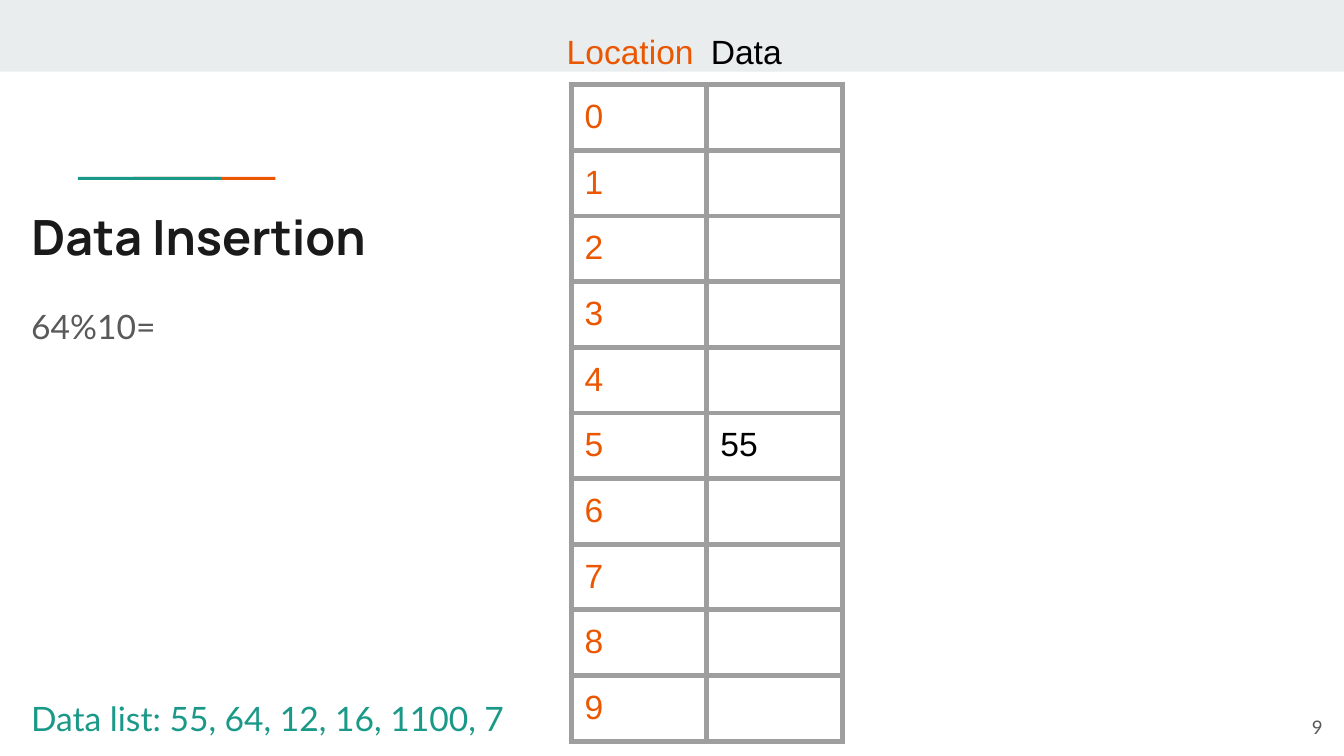
import dataclasses

import lxml.etree
import pptx
import pptx.dml.color
import pptx.enum.shapes
import pptx.enum.text
import pptx.oxml.ns
import pptx.util

ALIGN = pptx.enum.text.PP_ALIGN
ANCHOR = pptx.enum.text.MSO_ANCHOR


@dataclasses.dataclass(frozen=True)
class Theme:
    band: str = "E9EDEE"
    orange: str = "EB5600"
    teal: str = "1A9988"
    ink: str = "1A1A1A"
    black: str = "000000"
    gray: str = "595959"
    rule: str = "9E9E9E"
    head: str = "Manrope"
    body: str = "Lato"
    plain: str = "Arial"
    large: int = 26
    medium: int = 18
    small: int = 10
    border: int = 3
    inset: float = 0.1


@dataclasses.dataclass(frozen=True)
class Box:
    """Shares of the slide's size, in percent."""
    left: float
    top: float
    width: float
    height: float


@dataclasses.dataclass(frozen=True)
class Style:
    font: str
    size: int
    color: str
    bold: bool = False
    align: ALIGN = ALIGN.LEFT
    anchor: ANCHOR = ANCHOR.TOP
    space: float = 1.0


@dataclasses.dataclass(frozen=True)
class Label:
    text: str
    box: Box
    style: Style


@dataclasses.dataclass(frozen=True)
class Bar:
    box: Box
    color: str


THEME = Theme()
WIDTH = pptx.util.Inches(10)
HEIGHT = WIDTH * 9 // 16

INDEX = Style(THEME.plain, THEME.medium, THEME.orange)
VALUE = dataclasses.replace(INDEX, color=THEME.black)
NOTE = Style(THEME.body, THEME.medium, THEME.gray, space=1.15)

BARS = [
    Bar(Box(0, 0, 100, 9.47), THEME.band),
    Bar(Box(9.9, 23.4, 10.6, 0.4), THEME.orange),
    Bar(Box(5.8, 23.4, 10.65, 0.4), THEME.teal),
]
TITLE = Label("Data Insertion", Box(1.34, 25.6, 39.6, 12.27),
              Style(THEME.head, THEME.large, THEME.ink, bold=True))
LABELS = [
    Label("Location", Box(40.9, 2.31, 11.7, 6.58),
          dataclasses.replace(INDEX, align=ALIGN.RIGHT)),
    Label("Data", Box(51.9, 2.31, 9.9, 6.58), VALUE),
    Label("64%10=", Box(1.34, 37.87, 36.1, 15.11), NOTE),
    Label("Data list: 55, 64, 12, 16, 1100, 7", Box(1.34, 89.8, 39.6, 10.2),
          dataclasses.replace(NOTE, color=THEME.teal)),
    Label("9", Box(93.4, 92.35, 6, 7.65),
          Style(THEME.body, THEME.small, THEME.gray,
                align=ALIGN.RIGHT, anchor=ANCHOR.MIDDLE)),
]
GRID = Box(42.5, 11.2, 20.2, 86.9)
SLOTS = 10
STORED = {5: "55"}


def paint(hue: str) -> pptx.dml.color.RGBColor:
    return pptx.dml.color.RGBColor.from_string(hue)


def frame(box: Box) -> tuple[int, int, int, int]:
    return (int(WIDTH * box.left / 100), int(HEIGHT * box.top / 100),
            int(WIDTH * box.width / 100), int(HEIGHT * box.height / 100))


def pad(target) -> None:
    for side in ("left", "right", "top", "bottom"):
        setattr(target, f"margin_{side}", pptx.util.Inches(THEME.inset))


def write(body, text: str, style: Style) -> None:
    para = body.paragraphs[0]
    para.alignment = style.align
    para.line_spacing = style.space
    run = para.add_run()
    run.text = text
    run.font.name = style.font
    run.font.size = pptx.util.Pt(style.size)
    run.font.bold = style.bold
    run.font.color.rgb = paint(style.color)


def fill_text(shape, label: Label) -> None:
    shape.left, shape.top, shape.width, shape.height = frame(label.box)
    body = shape.text_frame
    body.word_wrap = True
    body.auto_size = pptx.enum.text.MSO_AUTO_SIZE.NONE
    body.vertical_anchor = label.style.anchor
    pad(body)
    write(body, label.text, label.style)


def draw_bar(slide, bar: Bar) -> None:
    shape = slide.shapes.add_shape(
        pptx.enum.shapes.MSO_SHAPE.RECTANGLE, *frame(bar.box))
    shape.shadow.inherit = False
    shape.fill.solid()
    shape.fill.fore_color.rgb = paint(bar.color)
    shape.line.fill.background()


def edge(cell) -> None:
    props = cell._tc.get_or_add_tcPr()
    name = pptx.oxml.ns.qn
    for place, side in enumerate(("lnL", "lnR", "lnT", "lnB")):
        line = lxml.etree.Element(
            name(f"a:{side}"), w=str(pptx.util.Pt(THEME.border)))
        solid = lxml.etree.SubElement(line, name("a:solidFill"))
        lxml.etree.SubElement(solid, name("a:srgbClr"), val=THEME.rule)
        props.insert(place, line)


def set_blank(cell) -> None:
    lxml.etree.SubElement(
        cell.text_frame.paragraphs[0]._p,
        pptx.oxml.ns.qn("a:endParaRPr"), sz=str(THEME.small * 100))


def draw_grid(slide) -> None:
    table = slide.shapes.add_table(SLOTS, 2, *frame(GRID)).table
    table.first_row = False
    table.horz_banding = False
    for slot in range(SLOTS):
        pairs = ((str(slot), INDEX), (STORED.get(slot, ""), VALUE))
        for cell, (text, style) in zip(table.rows[slot].cells, pairs):
            pad(cell)
            cell.fill.background()
            edge(cell)
            if text:
                write(cell.text_frame, text, style)
            else:
                set_blank(cell)


def main() -> None:
    deck = pptx.Presentation()
    deck.slide_width, deck.slide_height = WIDTH, HEIGHT
    slide = deck.slides.add_slide(deck.slide_layouts[5])
    for bar in BARS:
        draw_bar(slide, bar)
    fill_text(slide.shapes.title, TITLE)
    for label in LABELS:
        fill_text(slide.shapes.add_textbox(*frame(label.box)), label)
    draw_grid(slide)
    deck.save("out.pptx")


if __name__ == "__main__":
    main()
